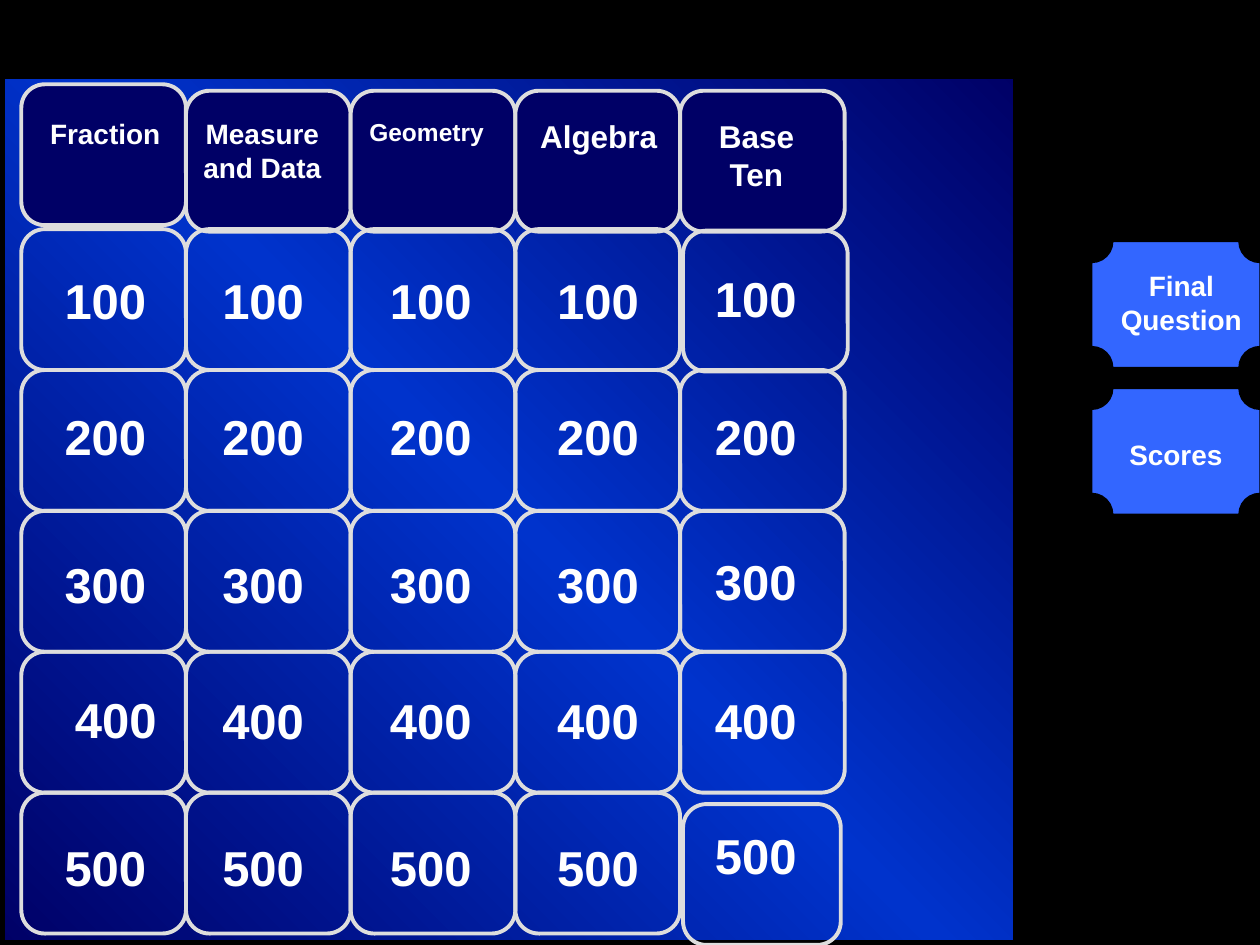
"""Build a quiz board slide with five categories, point cells and two side buttons."""
import copy

import pptx
import pptx.dml.color
import pptx.enum.shapes
import pptx.enum.text
import pptx.util

Cm = pptx.util.Cm
SHAPES = pptx.enum.shapes.MSO_SHAPE
NAVY, BLUE, BUTTON_BLUE = "000066", "0033CC", "3366FF"
BLACK, WHITE, SILVER = "000000", "FFFFFF", "DDDDDD"


def paint(fill, color):
    """Fill with a hex colour, or clear the fill when there is none."""
    if color is None:
        fill.background()
    else:
        fill.solid()
        fill.fore_color.rgb = pptx.dml.color.RGBColor.from_string(color)


deck = pptx.Presentation()
deck.slide_width, deck.slide_height = Cm(25.4), Cm(19.05)
page = deck.slides.add_slide(deck.slide_layouts[6])

categories = [("Fraction", 16, 0.64, 0.94), ("Measure and Data", 16, 3.81, 1.63),
              ("Geometry ", 14, 7.19, 0.86), ("Algebra", 18, 10.59, 1.02),
              ("Base Ten", 18, 13.77, 1.8)]
cell_left, cell_top, cell_width, cell_height = 0.43, 4.62, 3.32, 2.84
value_lefts = [0.43, 3.61, 6.99, 10.36, 13.54]
value_tops = [5.33, 8.08, 11.05, 13.79, 16.76]
moved_cells = {(0, 4): (13.77, 4.65, 3.32), (4, 4): (13.77, 16.21, 3.18)}
moved_values = {(0, 4): (13.54, 5.28), (2, 4): (13.54, 11.0),
                (3, 0): (0.64, 13.77), (4, 4): (13.54, 16.51)}
button_left, button_tops = 22.01, [4.87, 7.83]

panels = [(SHAPES.RECTANGLE, 0, 0, 25.4, 19.05, BLACK, BLACK, 0.75),
          (SHAPES.RECTANGLE, 0, 1.48, 20.52, 17.57, NAVY, BLACK, 6)]
labels = []

for column, (name, size, left, height) in enumerate(categories):
    panel_left = cell_left + column * cell_width
    panel_top = 1.83 if column else 1.7
    panels.append((SHAPES.ROUNDED_RECTANGLE, panel_left, panel_top,
                   cell_width, cell_height, NAVY, SILVER, 2.25))
    labels.append((name, size, left, 2.23, 2.96, height, None))

for row, value_top in enumerate(value_tops):
    for column, value_left in enumerate(value_lefts):
        regular_cell = (cell_left + column * cell_width,
                        cell_top + row * cell_height, cell_width)
        left, top, width = moved_cells.get((row, column), regular_cell)
        panels.append((SHAPES.ROUNDED_RECTANGLE, left, top, width, cell_height,
                       None, SILVER, 2.25))
        left, top = moved_values.get((row, column), (value_left, value_top))
        labels.append((str(100 * (row + 1)), 28, left, top, 3.39, 1.45, None))

for top in button_tops:
    panels.append((SHAPES.PLAQUE, button_left, top, 3.39, 2.54, BUTTON_BLUE, BLACK, 0.75))
labels.append(("Final Question", 16, 22.23, 5.29, 3.17, 1.63, None))
labels.append(("Scores", 16, 22.12, 8.69, 3.17, 0.94, BUTTON_BLUE))

for kind, left, top, width, height, color, line_color, line_width in panels:
    panel = page.shapes.add_shape(kind, Cm(left), Cm(top), Cm(width), Cm(height))
    panel.shadow.inherit = False
    paint(panel.fill, color)
    paint(panel.line.fill, line_color)
    panel.line.width = pptx.util.Pt(line_width)

board = page.shapes[1]
board.fill.gradient()
board.fill.gradient_angle = 45
first_stop, last_stop = board.fill.gradient_stops
first_stop.position, last_stop.position = 0, 1
for stop in (first_stop, last_stop):
    stop.color.rgb = pptx.dml.color.RGBColor.from_string(NAVY)
stop_list = board.fill._fill._gradFill.gsLst
stop_list.insert(1, copy.deepcopy(stop_list[0]))
middle_stop = board.fill.gradient_stops[1]
middle_stop.position = 0.5
middle_stop.color.rgb = pptx.dml.color.RGBColor.from_string(BLUE)

for text, size, left, top, width, height, color in labels:
    box = page.shapes.add_textbox(Cm(left), Cm(top), Cm(width), Cm(height))
    paint(box.fill, color)
    box.text_frame.word_wrap = True
    box.text_frame.auto_size = pptx.enum.text.MSO_AUTO_SIZE.SHAPE_TO_FIT_TEXT
    para = box.text_frame.paragraphs[0]
    para.alignment = pptx.enum.text.PP_ALIGN.CENTER
    span = para.add_run()
    span.text = text
    font_format = {"name": "Arial", "size": pptx.util.Pt(size), "bold": True}
    for attribute, value in font_format.items():
        setattr(span.font, attribute, value)
    paint(span.font.fill, WHITE)

deck.save("out.pptx")
